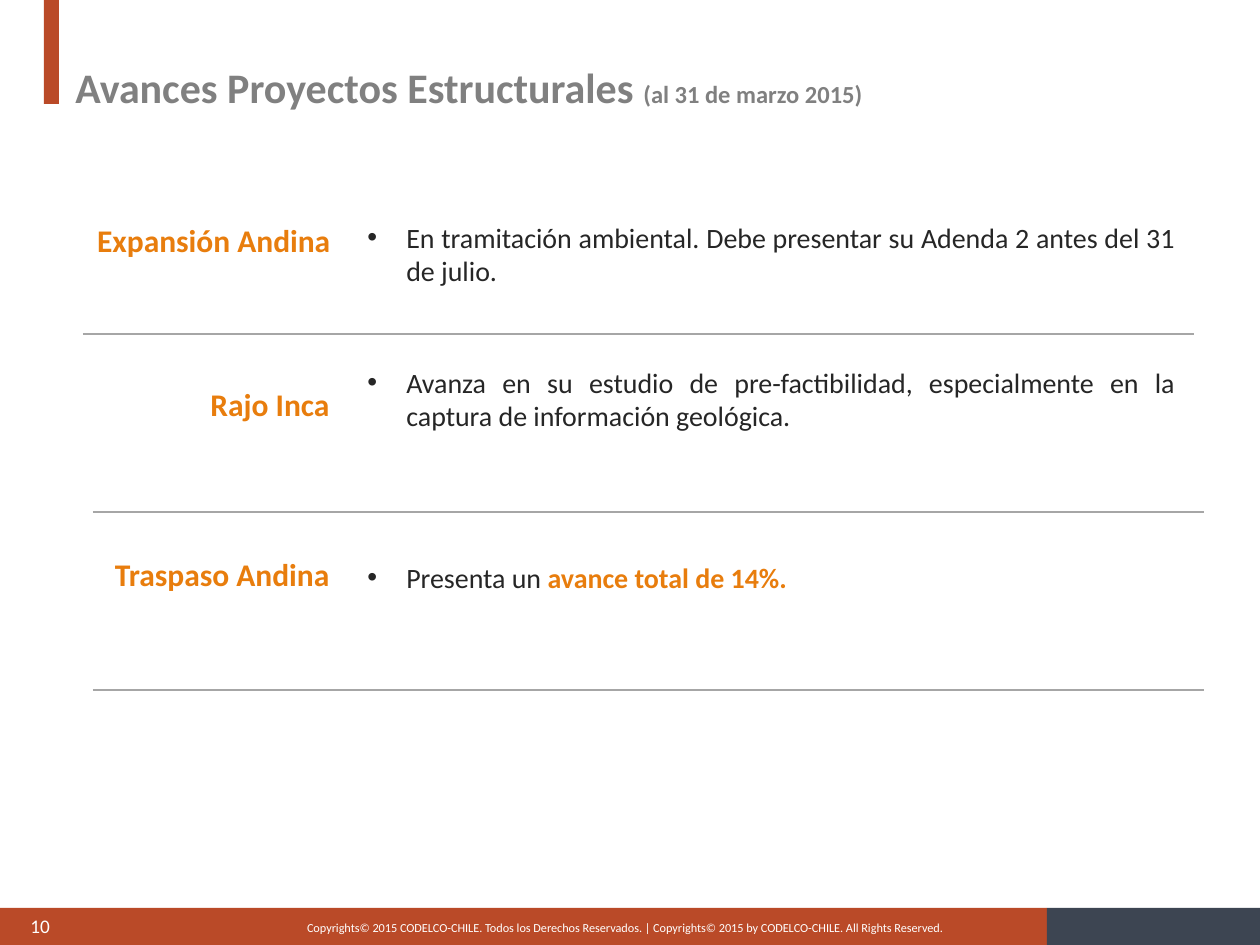
import pptx
import pptx.dml.color
import pptx.enum.shapes
import pptx.enum.text
import pptx.util
from lxml import etree

PX = 914400 / 126
ALIGN = pptx.enum.text.PP_ALIGN
ANCHOR = pptx.enum.text.MSO_ANCHOR
RUST, SLATE, ORANGE = "BA4A28", "3D4552", "E87D0D"
GREY, INK, RULE, WHITE = "808080", "262626", "A6A6A6", "FFFFFF"

PROJECTS = [
    {"name": "Expansión Andina", "name_box": (5, 59, 338), "status_top": 58, "rule_left": 83,
     "status": [("En tramitación ambiental. Debe presentar su Adenda 2 antes del 31 de julio.", {})]},
    {"name": "Rajo Inca", "name_box": (54, 45, 288), "status_top": 25, "rule_left": 93,
     "status": [("Avanza en su estudio de pre-factibilidad, especialmente en la "
                 "captura de información geológica.", {})]},
    {"name": "Traspaso Andina", "name_box": (54, 37, 288), "status_top": 42, "rule_left": 93,
     "status": [("Presenta un ", {}),
                ("avance total de 14%.", {"color": ORANGE, "bold": True})]},
]


def emu(*lengths):
    """Turn px lengths into EMU."""
    return [pptx.util.Emu(round(length * PX)) for length in lengths]


def rgb(value):
    """Turn a hex string into a colour."""
    return pptx.dml.color.RGBColor.from_string(value)


def add_block(slide, box, color):
    """Draw a plain filled rectangle."""
    block = slide.shapes.add_shape(pptx.enum.shapes.MSO_SHAPE.RECTANGLE, *emu(*box))
    block.shadow.inherit = False
    block.fill.solid()
    block.fill.fore_color.rgb = rgb(color)
    block.line.fill.background()


def add_text(slide, box, runs, base, align=ALIGN.LEFT, anchor=ANCHOR.TOP, bullet=False):
    """Place one paragraph of runs, each a text with its changes to the base format."""
    frame = slide.shapes.add_textbox(*emu(*box)).text_frame
    frame.word_wrap = True
    frame.vertical_anchor = anchor
    paragraph = frame.paragraphs[0]
    paragraph.alignment = align
    if bullet:
        add_bullet(paragraph)
    for words, changes in runs:
        run = paragraph.add_run()
        run.text = words
        style = {"name": "Calibri", "bold": False, **base, **changes}
        run.font.color.rgb = rgb(style.pop("color"))
        style["size"] = pptx.util.Pt(style["size"])
        for attribute, value in style.items():
            setattr(run.font, attribute, value)


def add_bullet(paragraph):
    """Give a paragraph a round bullet with a hanging indent."""
    indent = emu(39)[0]
    properties = paragraph._p.get_or_add_pPr()
    properties.set("marL", str(indent))
    properties.set("indent", str(-indent))
    for tag, key, value in (("a:buFont", "typeface", "Arial"), ("a:buChar", "char", "•")):
        etree.SubElement(properties, pptx.oxml.ns.qn(tag)).set(key, value)


def add_rule(slide, left, top, width):
    """Draw a thin horizontal rule."""
    rule = slide.shapes.add_connector(
        pptx.enum.shapes.MSO_CONNECTOR.STRAIGHT, *emu(left, top, left + width, top))
    rule.line.color.rgb = rgb(RULE)
    rule.line.width = pptx.util.Pt(0.75)
    etree.SubElement(rule._element.spPr, pptx.oxml.ns.qn("a:effectLst"))


def add_header(slide, left, top):
    """Place the accent bar and the title."""
    add_block(slide, (left, top, 15, 104), RUST)
    add_text(slide, (left + 19, top + 38, 1134, 97),
             [("Avances Proyectos Estructurales ", {}),
              ("(al 31 de marzo 2015)", {"size": 14})],
             {"size": 24, "bold": True, "color": GREY}, anchor=ANCHOR.MIDDLE)


def add_project(slide, left, top, height, project):
    """Place a project's name, its status and the rule that closes the row."""
    name_left, name_top, name_width = project["name_box"]
    add_text(slide, (left + name_left, top + name_top, name_width, 51),
             [(project["name"], {})],
             {"size": 18, "bold": True, "color": ORANGE}, ALIGN.RIGHT)
    add_text(slide, (left + 355, top + project["status_top"], 833, 81),
             project["status"], {"size": 16, "color": INK}, ALIGN.JUSTIFY, bullet=True)
    add_rule(slide, left + project["rule_left"], top + height, 1111)


def add_footer(slide, left, top, width, height):
    """Place the two footer bands, the page number and the copyright line."""
    split = 1047
    add_block(slide, (left, top, split, height), RUST)
    add_block(slide, (left + split, top, width - split, height), SLATE)
    add_text(slide, (left + 243, top + 6, 764, 24),
             [("Copyrights© 2015 CODELCO-CHILE. Todos los Derechos Reservados. | "
               "Copyrights© 2015 by CODELCO-CHILE. All Rights Reserved.", {})],
             {"size": 7, "color": WHITE}, ALIGN.CENTER)
    add_text(slide, (left + 18, top - 7, 185, 50), [("10", {})],
             {"size": 11, "color": WHITE}, anchor=ANCHOR.MIDDLE)


def main():
    """Build the slide and save it."""
    deck = pptx.Presentation()
    deck.slide_width, deck.slide_height = emu(1260, 945)
    slide = deck.slides.add_slide(deck.slide_layouts[6])
    add_header(slide, 44, 0)
    row_height = 178
    for index, project in enumerate(PROJECTS):
        add_project(slide, 0, 156 + index * row_height, row_height, project)
    add_footer(slide, 0, 908, 1260, 37)
    deck.save("out.pptx")


if __name__ == "__main__":
    main()
